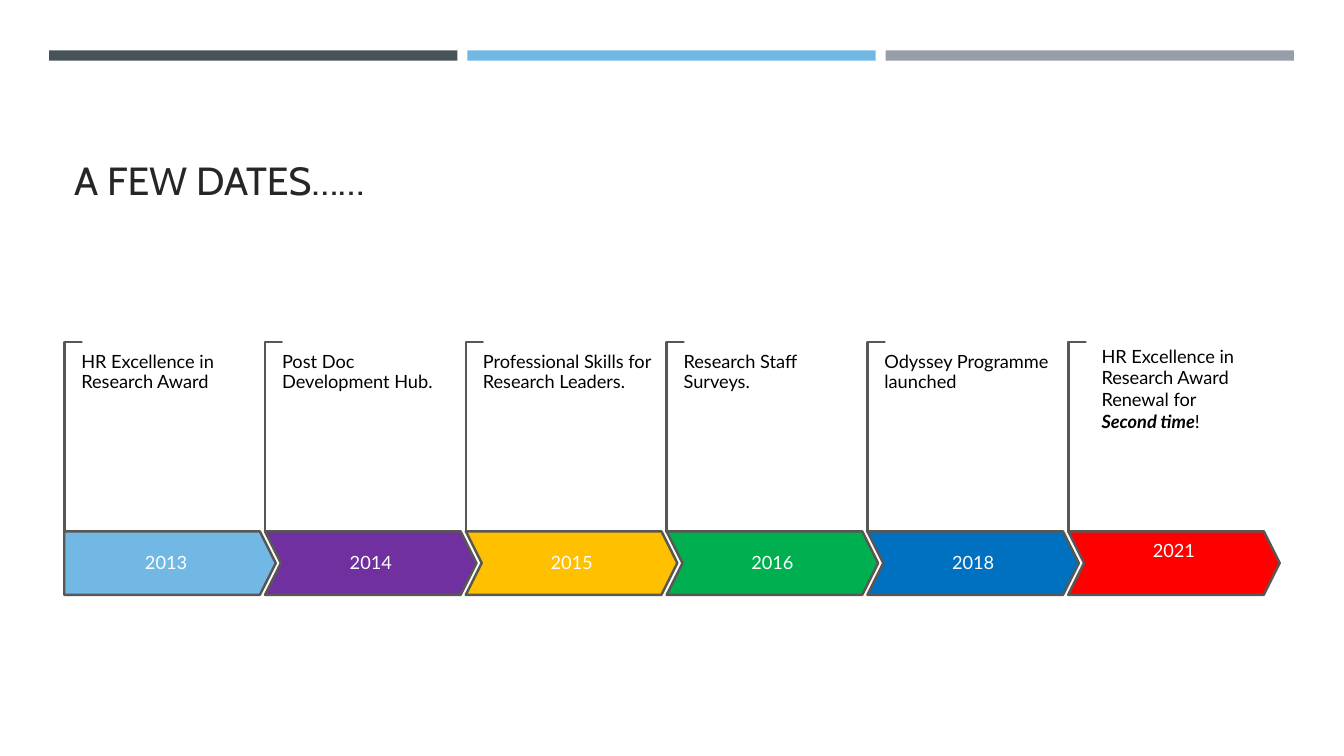
from dataclasses import dataclass

from pptx import Presentation
from pptx import util as u
from pptx.dml.color import RGBColor
from pptx.enum import shapes, text

SHAPE = shapes.MSO_SHAPE
ANCHOR = text.MSO_ANCHOR
OUTLINE = "585753"
BAR_COLORS = ["465359", "71B9E4", "969FA7"]
BAR_LEFT, BAR_PITCH = 1.24, 10.54
STEP_LEFT, STEP_PITCH = 1.62, 5.06


@dataclass
class Run:
    text: str
    emphasis: bool = False


@dataclass
class Milestone:
    year: str
    color: str
    note: list[Run]
    kind: int = SHAPE.CHEVRON
    year_lift: float = 0
    # left offset, top, width, height of the note
    note_box: tuple[float, float, float, float] = (0.43, 8.89, 4.32, 3.05)
    note_insets: tuple[float, float] = (0, 0)
    note_spacing: float = 0.9


MILESTONES = [
    Milestone("2013", "71B9E4", [Run("HR Excellence in Research Award")],
              kind=SHAPE.PENTAGON),
    Milestone("2014", "7030A0", [Run("Post Doc Development Hub.")]),
    Milestone("2015", "FFC000",
              [Run("Professional Skills for Research Leaders.")]),
    Milestone("2016", "00B050", [Run("Research Staff Surveys.")]),
    Milestone("2018", "0070C0", [Run("Odyssey Programme launched")]),
    Milestone("2021", "FF0000",
              [Run("HR Excellence in Research Award Renewal for "),
               Run("Second time", emphasis=True), Run("!")],
              year_lift=0.58, note_box=(0.59, 8.56, 3.89, 2.49),
              note_insets=(0.25, 0.13), note_spacing=1.0),
]


def rgb(color: str) -> RGBColor:
    return RGBColor.from_string(color)


def add_block(s, kind: int, left: float, top: float, width: float,
              height: float, fill: str, line: str | None = None):
    sp = s.shapes.add_shape(kind, u.Cm(left), u.Cm(top),
                            u.Cm(width), u.Cm(height))
    sp.shadow.inherit = False
    sp.fill.solid()
    sp.fill.fore_color.rgb = rgb(fill)
    if line:
        sp.line.color.rgb = rgb(line)
        sp.line.width = u.Pt(1.75)
    else:
        sp.line.fill.background()
    return sp


def add_box(s, left: float, top: float, width: float, height: float):
    return s.shapes.add_textbox(u.Cm(left), u.Cm(top),
                                u.Cm(width), u.Cm(height))


def write(sp, runs: list[Run], color: str, size: float = 13,
          font: str = "Lato", insets: tuple[float, float] = (0, 0),
          anchor=ANCHOR.TOP, align=text.PP_ALIGN.LEFT,
          spacing: float = 0.9) -> None:
    tf = sp.text_frame
    tf.word_wrap = True
    tf.vertical_anchor = anchor
    tf.margin_left = tf.margin_right = u.Cm(insets[0])
    tf.margin_top = tf.margin_bottom = u.Cm(insets[1])
    p = tf.paragraphs[0]
    p.alignment = align
    p.line_spacing = spacing
    for run in runs:
        r = p.add_run()
        r.text = run.text
        r.font.name = font
        r.font.size = u.Pt(size)
        r.font.color.rgb = rgb(color)
        r.font.bold = r.font.italic = run.emphasis


def add_bracket(s, left: float) -> None:
    """Draw the thin corner that rises from a milestone to its note."""
    length, depth, center_y = 4.78, 0.43, 11.01
    sp = add_block(s, SHAPE.CORNER, left + (depth - length) / 2,
                   center_y - depth / 2, length, depth, "EBDDC3", OUTLINE)
    sp.rotation = 90
    sp.adjustments[0] = sp.adjustments[1] = 0.01


def add_milestone(s, left: float, item: Milestone) -> None:
    add_bracket(s, left)
    sp = add_block(s, item.kind, left, 13.39, 5.33, 1.6, item.color, OUTLINE)
    sp.adjustments[0] = 0.25
    write(sp, [Run(item.year)], "FFFFFF", anchor=ANCHOR.MIDDLE,
          align=text.PP_ALIGN.CENTER)
    sp.text_frame.margin_bottom = u.Cm(item.year_lift)
    offset, *box = item.note_box
    write(add_box(s, left + offset, *box), item.note, "000000",
          insets=item.note_insets, spacing=item.note_spacing)


def main() -> None:
    prs = Presentation()
    prs.slide_width, prs.slide_height = u.Cm(33.87), u.Cm(19.05)
    s = prs.slides.add_slide(prs.slide_layouts[6])
    for i, color in enumerate(BAR_COLORS):
        add_block(s, SHAPE.RECTANGLE, BAR_LEFT + i * BAR_PITCH, 1.27,
                  10.29, 0.26, color)
    write(add_box(s, STEP_LEFT, 1.96, 30.63, 3.3), [Run("A FEW DATES……")],
          "262626", size=28, font="Cabin", insets=(0.25, 0.13),
          anchor=ANCHOR.BOTTOM)
    for i, item in enumerate(MILESTONES):
        add_milestone(s, STEP_LEFT + i * STEP_PITCH, item)
    prs.save("out.pptx")


if __name__ == "__main__":
    main()
